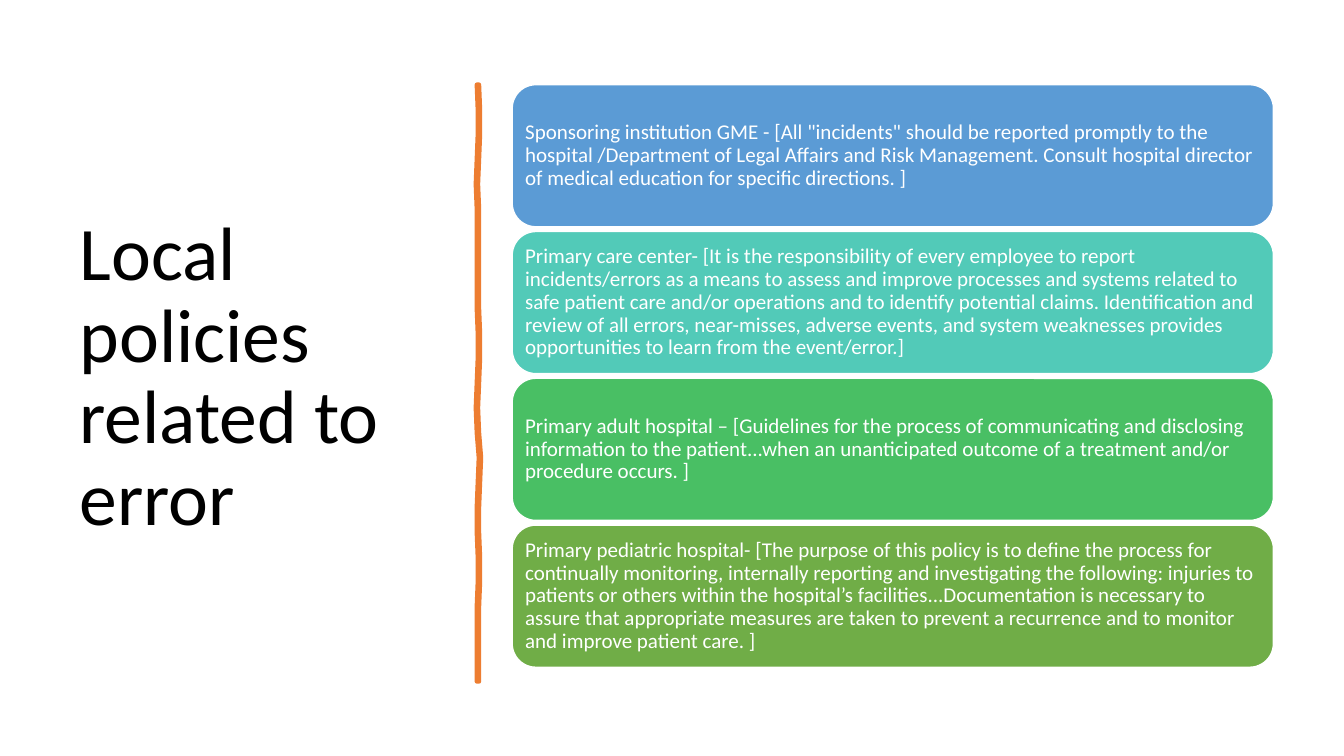
from lxml import etree
from pptx import Presentation
from pptx.dml.color import RGBColor
from pptx.enum.shapes import MSO_SHAPE as Preset
from pptx.enum.text import MSO_ANCHOR as Anchor, PP_ALIGN as Align
from pptx.oxml.ns import qn
from pptx.util import Inches, Pt

FONT = "Calibri"
TITLE = "Local policies related to error"
POLICIES = [
    ("5B9BD5", 'Sponsoring institution GME - [All "incidents" should be reported promptly '
     "to the hospital /Department of Legal Affairs and Risk Management. Consult hospital "
     "director of medical education for specific directions. ]"),
    ("52CAB8", "Primary care center- [It is the responsibility of every employee to report "
     "incidents/errors as a means to assess and improve processes and systems related to "
     "safe patient care and/or operations and to identify potential claims. Identification "
     "and review of all errors, near-misses, adverse events, and system weaknesses provides "
     "opportunities to learn from the event/error.]"),
    ("49BF64", "Primary adult hospital – [Guidelines for the process of communicating and "
     "disclosing information to the patient...when an unanticipated outcome of a treatment "
     "and/or procedure occurs. ]"),
    ("70AD47", "Primary pediatric hospital- [The purpose of this policy is to define the "
     "process for continually monitoring, internally reporting and investigating the "
     "following: injuries to patients or others within the hospital’s facilities..."
     "Documentation is necessary to assure that appropriate measures are taken to prevent a "
     "recurrence and to monitor and improve patient care. ]"),
]
DIVIDER_DRIFT = [0, 0.01, 0.01, 0, -0.01, 0, 0, 0, 0, 0, 0.01, 0.01, 0,
                 -0.01, 0, 0.02, 0.01, 0, 0, 0.01, 0.01, 0, 0, 0, 0]


def color(value):
    return RGBColor.from_string(value)


def paint(shape, fill, line, width):
    shape.shadow.inherit = False
    shape.fill.solid()
    shape.fill.fore_color.rgb = color(fill)
    shape.line.color.rgb = color(line)
    shape.line.width = Pt(width)


def write(shape, text, size, text_color):
    frame = shape.text_frame
    frame.word_wrap = True
    frame.vertical_anchor = Anchor.MIDDLE
    frame.text = text
    paragraph = frame.paragraphs[0]
    paragraph.alignment = Align.LEFT
    paragraph.line_spacing = 0.9
    font = paragraph.runs[0].font
    font.name = FONT
    font.size = Pt(size)
    font.color.rgb = color(text_color)


def add_title(slide, left, top, width, height):
    box = slide.shapes.add_textbox(Inches(left), Inches(top), Inches(width), Inches(height))
    write(box, TITLE, 54, "000000")


def add_divider(slide, left, top, width, height):
    step = height / (len(DIVIDER_DRIFT) - 1)
    left_edge = [(left + drift, top + index * step) for index, drift in enumerate(DIVIDER_DRIFT)]
    right_edge = [(x + width, y) for x, y in reversed(left_edge)]
    outline = [(Inches(x), Inches(y)) for x, y in left_edge + right_edge]
    builder = slide.shapes.build_freeform(*outline[0])
    builder.add_line_segments(outline[1:], close=True)
    divider = builder.convert_to_shape()
    paint(divider, "ED7D31", "ED7D31", 3.25)
    etree.SubElement(divider.line._get_or_add_ln(), qn("a:round"))


def add_policies(slide, left, top, width, height, card_height=1.41):
    pitch = (height - card_height) / (len(POLICIES) - 1)
    for index, (fill, text) in enumerate(POLICIES):
        card = slide.shapes.add_shape(
            Preset.ROUNDED_RECTANGLE, Inches(left), Inches(top + index * pitch),
            Inches(width), Inches(card_height))
        paint(card, fill, "FFFFFF", 1)
        write(card, text, 15, "FFFFFF")
        frame = card.text_frame
        frame.margin_left = frame.margin_right = Inches(0.06)
        frame.margin_top = frame.margin_bottom = Inches(0.06)


def main():
    presentation = Presentation()
    presentation.slide_width = Inches(13.33)
    presentation.slide_height = Inches(7.5)
    slide = presentation.slides.add_slide(presentation.slide_layouts[6])
    add_title(slide, 0.69, 0.7, 3.74, 6.11)
    add_divider(slide, 4.73, 0.84, 0.02, 5.92)
    add_policies(slide, 5.08, 0.84, 7.55, 5.78)
    presentation.save("out.pptx")


if __name__ == "__main__":
    main()
